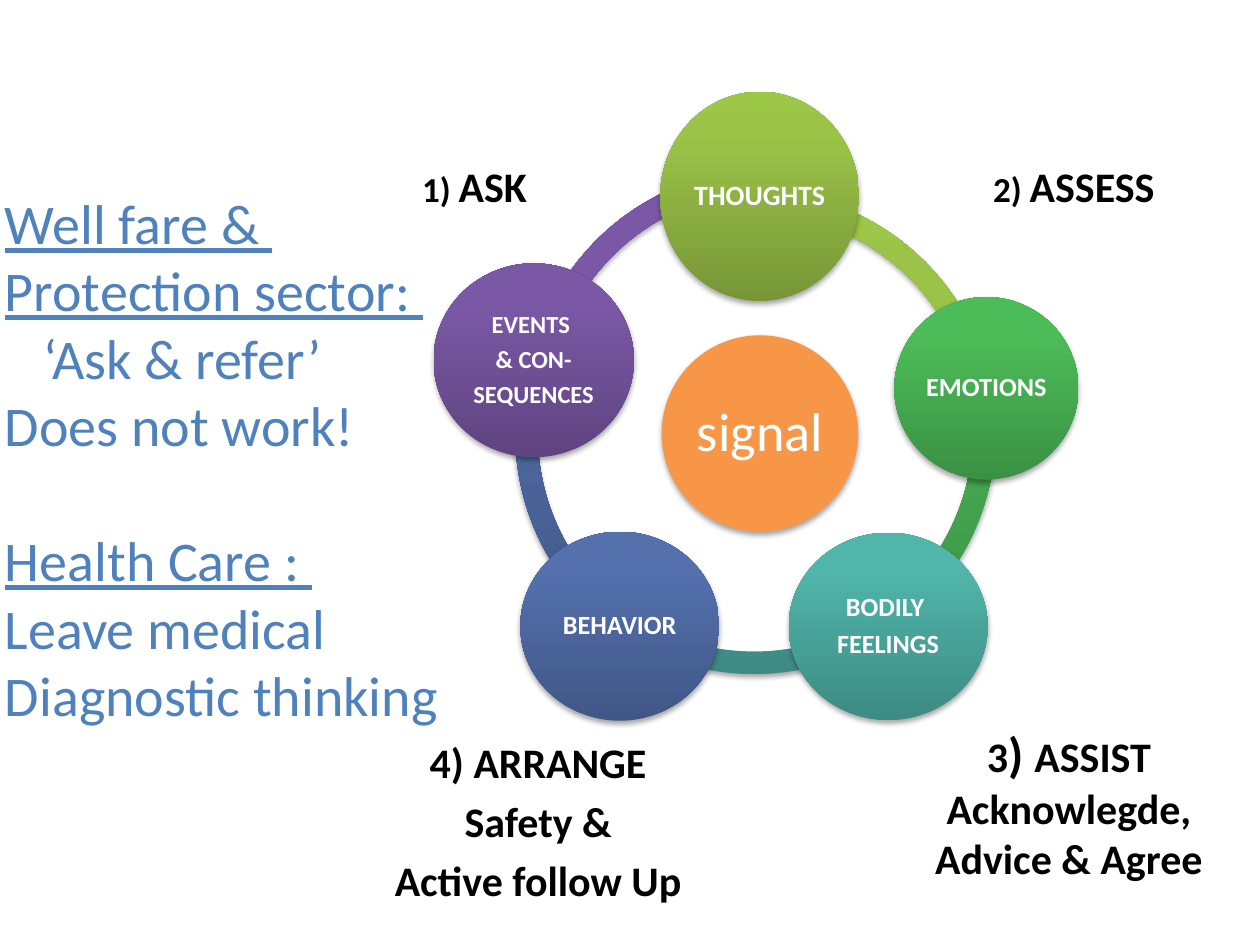
"""Build the signal cycle slide with its four steps and side notes."""
from copy import deepcopy

from pptx import Presentation
from pptx.dml.color import RGBColor as Rgb
from pptx.enum.shapes import MSO_SHAPE as Kind
from pptx.enum.text import MSO_ANCHOR as Anchor, PP_ALIGN as Align
from pptx.oxml import parse_xml
from pptx.oxml.ns import nsdecls, qn
from pptx.util import Cm, Pt

FONT = "Calibri"
HUES = {
    "white": "FFFFFF",
    "black": "000000",
    "blue": "4F81BD",
    "orange": "F79646",
}
RAMPS = {
    "lime": ("779737", "9BC348", "9DC746"),
    "green": ("3A9144", "4CBC58", "4ABF57"),
    "teal": ("3D8B83", "50B5AA", "4EB8AC"),
    "navy": ("405786", "5471AE", "5271B0"),
    "plum": ("5F4480", "7B58A6", "7C57A8"),
}
SHADE = (
    f'<a:outerShdw {nsdecls("a")} blurRad="40000" dist="23000" dir="5400000"'
    ' rotWithShape="0"><a:srgbClr val="000000"><a:alpha val="35000"/>'
    "</a:srgbClr></a:outerShdw>"
)
ARC = 9.83
ARCS = [
    ("plum", 10.59, 3.4, 118.9, 162.03),
    ("navy", 10.39, 3.84, 75.57, 118.88),
    ("teal", 10.29, 3.76, 33.43, 74.63),
    ("green", 10.24, 3.78, 209.76, 33.04),
    ("lime", 10.26, 3.84, 163.06, 209.43),
]
DISCS = [
    ("lime", (13.31, 1.85, 4.01, 4.22), 16, ["THOUGHTS"]),
    ("green", (18.03, 5.99, 3.71, 3.68), 15, ["EMOTIONS"]),
    ("teal", (15.9, 10.74, 4.01, 3.78), 15, ["BODILY ", "FEELINGS"]),
    ("navy", (10.49, 10.72, 4.01, 3.81), 15, ["BEHAVIOR"]),
    ("plum", (8.74, 5.31, 4.04, 3.91), 14, ["EVENTS ", "& CON-", "SEQUENCES"]),
]
STEPS = [
    ((8.26, 1.14, 5, 3.23), [[("1) ", 20), ("ASK", 24)]], Align.LEFT),
    ((19.77, 1.14, 5.6, 3.23), [[("2) ", 20), ("ASSESS", 24)]], Align.LEFT),
    ((17.7, 14.12, 7.7, 3.81),
     [[("3", 24), (") ", 28), ("ASSIST", 24)],
      [("Acknowlegde,", 24)], [("Advice & Agree", 24)]], Align.CENTER),
]
PLAN = ["4) ARRANGE", "Safety &", "Active follow Up"]
NOTES = ["Well fare & ", "Protection sector: ", "‘Ask & refer’",
         "Does not work!", "Health Care : ", "Leave medical",
         "Diagnostic thinking"]
HEADS = (0, 1, 4)


def paint(shape, ramp):
    """Fill a shape with a rising three-stop gradient."""
    fill = shape.fill
    fill.gradient()
    fill.gradient_angle = 90
    bed = shape.element.spPr.find(".//" + qn("a:gsLst"))
    bed.append(deepcopy(bed[-1]))
    for stop, spot, hue in zip(fill.gradient_stops, (0, 0.8, 1), ramp):
        stop.position = spot
        stop.color.rgb = Rgb.from_string(hue)


def add_form(slide, kind, box):
    """Add a preset shape with no outline and a soft shadow."""
    shape = slide.shapes.add_shape(kind, *map(Cm, box))
    shape.line.fill.background()
    shape.shadow.inherit = False
    shape.element.spPr.find(qn("a:effectLst")).append(parse_xml(SHADE))
    return shape


def add_arc(slide, ramp, left, top, start, end):
    """Add one segment of the ring."""
    arc = add_form(slide, Kind.BLOCK_ARC, (left, top, ARC, ARC))
    for i, value in enumerate((start, end, 0.046)):
        arc.adjustments[i] = value
    paint(arc, RAMPS[ramp])


def write(frame, lines, hue, align, size=None, bold=None):
    """Write lines, each a string or a list of sized runs."""
    frame.word_wrap = True
    for i, line in enumerate(lines):
        para = frame.paragraphs[0] if i == 0 else frame.add_paragraph()
        para.alignment = align
        font = para.font
        font.name, font.bold = FONT, bold
        font.color.rgb = Rgb.from_string(HUES[hue])
        if isinstance(line, str):
            para.add_run().text = line
            font.size = Pt(size)
            continue
        for text, points in line:
            run = para.add_run()
            run.text = text
            run.font.size = Pt(points)
    return frame.paragraphs


def add_disc(slide, box, size, lines, pad, bold=None):
    """Add a circle with centred white text."""
    disc = add_form(slide, Kind.OVAL, box)
    frame = disc.text_frame
    frame.vertical_anchor = Anchor.MIDDLE
    frame.margin_left = frame.margin_right = Cm(pad)
    frame.margin_top = frame.margin_bottom = Cm(pad)
    for para in write(frame, lines, "white", Align.CENTER, size, bold):
        para.line_spacing = 0.9
        para.space_after = Pt(round(size * 0.35, 1))
    return disc


def add_text(slide, box, anchor=Anchor.TOP):
    """Add a text box and return its frame."""
    frame = slide.shapes.add_textbox(*map(Cm, box)).text_frame
    frame.vertical_anchor = anchor
    return frame


def add_plan(slide):
    """Add the fourth step with spaced lines."""
    frame = add_text(slide, (6.99, 14.73, 7.72, 3.9))
    paras = write(frame, PLAN, "black", Align.CENTER, 24, True)
    for para in paras[1:]:
        para.space_before = Pt(4.8)


def add_notes(slide):
    """Add the side notes with underlined heads."""
    frame = add_text(slide, (-0.15, 3.68, 13.16, 12.4))
    paras = write(frame, NOTES, "blue", Align.LEFT, 32)
    for i in HEADS:
        paras[i].font.underline = True
    paras[2].element.get_or_add_pPr().set("marL", str(Cm(0.77))) if hasattr(
        paras[2], "element") else paras[2]._p.get_or_add_pPr().set(
        "marL", str(Cm(0.77)))
    paras[4].space_before = Pt(39)


def main():
    """Build and save the slide."""
    deck = Presentation()
    deck.slide_width, deck.slide_height = Cm(25.4), Cm(19.05)
    slide = deck.slides.add_slide(deck.slide_layouts[6])
    for arc in ARCS:
        add_arc(slide, *arc)
    core = add_disc(slide, (13.34, 6.76, 3.96, 3.96), 31, ["signal"], 0.1)
    core.fill.solid()
    core.fill.fore_color.rgb = Rgb.from_string(HUES["orange"])
    for ramp, box, size, lines in DISCS:
        paint(add_disc(slide, box, size, lines, 0.05, True), RAMPS[ramp])
    add_plan(slide)
    for box, lines, align in STEPS:
        frame = add_text(slide, box, Anchor.BOTTOM)
        write(frame, lines, "black", align, bold=True)
    add_notes(slide)
    deck.save("out.pptx")


if __name__ == "__main__":
    main()
